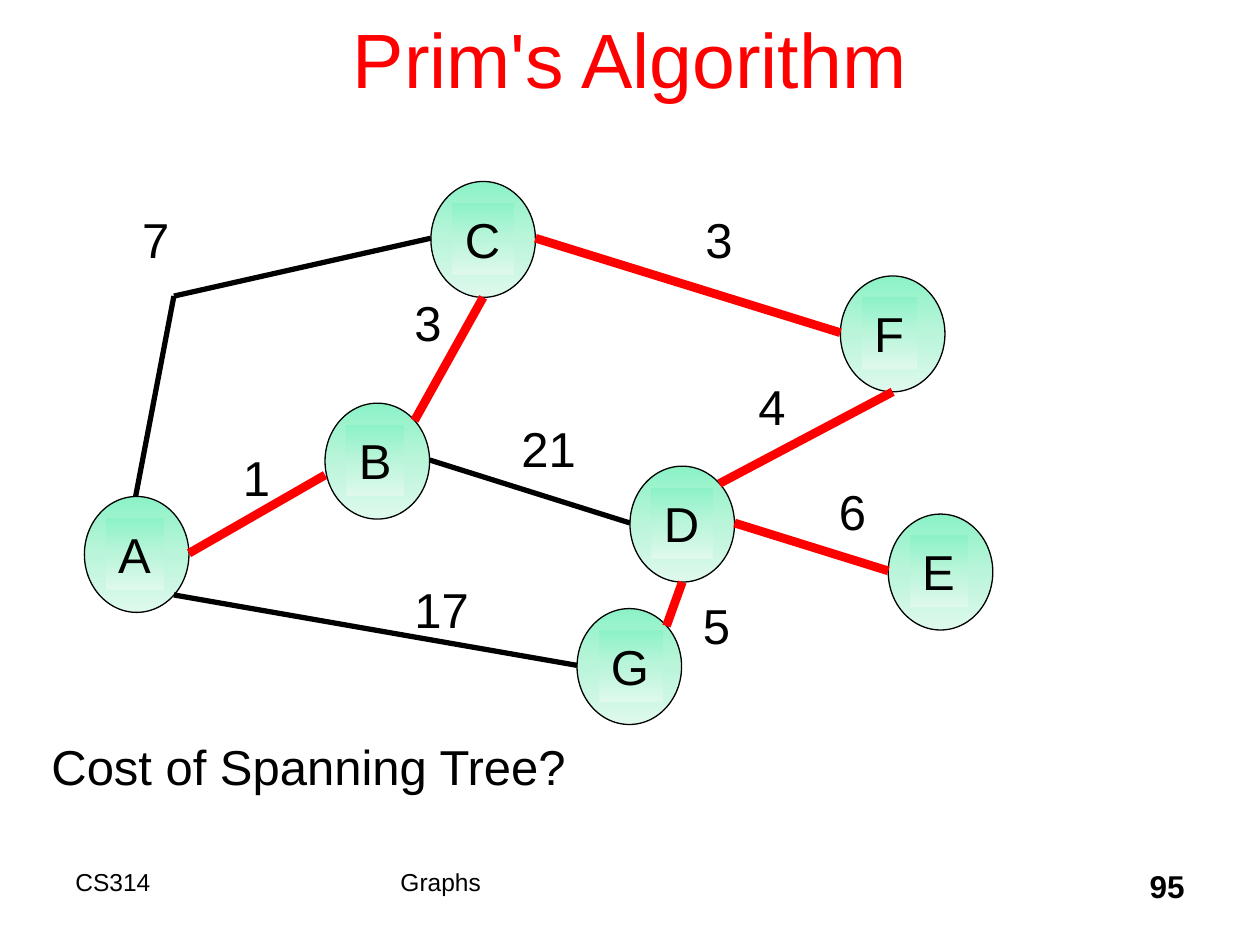
from copy import deepcopy

from lxml import etree
from pptx import Presentation
from pptx.dml.color import RGBColor
from pptx.enum.shapes import MSO_CONNECTOR, MSO_SHAPE
from pptx.enum.text import MSO_ANCHOR, MSO_AUTO_SIZE, PP_ALIGN
from pptx.oxml.ns import qn
from pptx.util import Inches, Pt

LEFT, CENTER, RIGHT = PP_ALIGN.LEFT, PP_ALIGN.CENTER, PP_ALIGN.RIGHT
TOP, MIDDLE = MSO_ANCHOR.TOP, MSO_ANCHOR.MIDDLE
OVAL, RECTANGLE = MSO_SHAPE.OVAL, MSO_SHAPE.RECTANGLE
STRAIGHT = MSO_CONNECTOR.STRAIGHT
FIT_SHAPE = MSO_AUTO_SIZE.SHAPE_TO_FIT_TEXT

FONT = "Arial"
COLORS = {"text": "000000", "edge": "000000", "tree": "FF0000", "title": "FF0000",
          "node top": "8CF2C6", "node middle": "BAF5DA", "node bottom": "DEF9EC"}

NODE_WIDTH, NODE_HEIGHT = 0.83, 0.92
LABEL_INSET, LABEL_HEIGHT = 0.17, 0.57

# Name: left, top, width of the label plate
NODES = {"A": (0.67, 3.94, 0.46), "B": (2.58, 3.2, 0.46), "C": (3.42, 1.44, 0.49),
         "F": (6.67, 2.19, 0.44), "D": (5, 3.7, 0.49), "E": (7.05, 4.08, 0.46),
         "G": (4.58, 4.83, 0.51)}

# Places on a node's rim, as shares of its width and height
RIM = {"left": (0, 0.49), "right": (1, 0.49), "top": (0.49, 0), "bottom": (0.5, 1),
       "upper right": (0.855, 0.15), "lower right": (0.855, 0.85), "lower left": (0, 0.62)}

TREE_EDGES = [("A", "right", "B", "lower left"), ("B", "upper right", "C", "bottom"),
              ("C", "right", "F", "left"), ("F", "bottom", "D", "upper right"),
              ("D", "right", "E", "left"), ("D", "bottom", "G", "upper right")]
OTHER_EDGES = [("B", "right", "D", "left"), ("A", "lower right", "G", "left")]
BEND = (1.38, 2.35)  # corner of the edge from A to C

WEIGHTS = [("1", 1.83, 3.5), ("3", 3.19, 2.27), ("3", 5.5, 1.61), ("21", 4.04, 3.27),
           ("4", 5.92, 2.94), ("6", 6.56, 3.77), ("17", 3.19, 4.55), ("5", 5.48, 4.68),
           ("7", 1.03, 1.61)]


def color(name):
    return RGBColor.from_string(COLORS[name])


def write(shape, text, size=28, fill="text", bold=False, align=LEFT, anchor=TOP,
          wrap=True, before=0, grow=False):
    frame = shape.text_frame
    frame.word_wrap = wrap
    frame.vertical_anchor = anchor
    if grow:
        frame.auto_size = FIT_SHAPE
    para = frame.paragraphs[0]
    para.alignment = align
    para.space_before = Pt(before)
    span = para.add_run()
    span.text = text
    span.font.name, span.font.size, span.font.bold = FONT, Pt(size), bold
    span.font.color.rgb = color(fill)


def add_text(page, text, left, top, width, height, **style):
    box = page.shapes.add_textbox(*map(Inches, (left, top, width, height)))
    write(box, text, **style)


def shade(shape):
    """Fill with the vertical three-stop node gradient."""
    shape.fill.gradient()
    shape.fill.gradient_angle = 270
    stops = shape._element.spPr.find(f".//{qn('a:gsLst')}")
    stops.insert(1, deepcopy(stops[0]))
    names = ("node top", "node middle", "node bottom")
    for stop, position, name in zip(shape.fill.gradient_stops, (0, 0.5, 1), names):
        stop.position = position
        stop.color.rgb = color(name)


def add_node(page, name):
    left, top, label_width = NODES[name]
    group = page.shapes.add_group_shape()
    circle = group.shapes.add_shape(
        OVAL, *map(Inches, (left, top, NODE_WIDTH, NODE_HEIGHT)))
    circle.line.color.rgb = color("edge")
    circle.line.width = Pt(0.75)
    plate = group.shapes.add_shape(
        RECTANGLE, *map(Inches, (left + LABEL_INSET, top + LABEL_INSET,
                                 label_width, LABEL_HEIGHT)))
    plate.line.fill.background()
    for shape in (circle, plate):
        shape.shadow.inherit = False
        shade(shape)
    write(plate, name, wrap=False, before=3, grow=True)


def rim_point(name, place):
    left, top, _ = NODES[name]
    across, down = RIM[place]
    return left + across * NODE_WIDTH, top + down * NODE_HEIGHT


def add_edge(page, start, end, fill="edge", width=3):
    line = page.shapes.add_connector(STRAIGHT, *map(Inches, (*start, *end)))
    line.line.color.rgb = color(fill)
    line.line.width = Pt(width)
    etree.SubElement(line._element.spPr, qn("a:effectLst"))


def main():
    deck = Presentation()
    deck.slide_width, deck.slide_height = Inches(10), Inches(7.5)
    page = deck.slides.add_slide(deck.slide_layouts[6])

    add_text(page, "Prim's Algorithm", 0.75, -0.17, 8.5, 1.25, size=44,
             fill="title", align=CENTER, anchor=MIDDLE)
    add_text(page, "CS314", 0.5, 6.83, 2.5, 0.5, size=14)
    add_text(page, "Graphs", 3.08, 6.83, 3.83, 0.5, size=14)
    add_text(page, "95", 7.42, 6.83, 2.08, 0.5, size=18, bold=True, align=RIGHT)

    for name in NODES:
        add_node(page, name)
    for first, leaving, second, arriving in TREE_EDGES:
        add_edge(page, rim_point(first, leaving), rim_point(second, arriving),
                 fill="tree", width=5)
    for first, leaving, second, arriving in OTHER_EDGES:
        add_edge(page, rim_point(first, leaving), rim_point(second, arriving))
    add_edge(page, rim_point("A", "top"), BEND)
    add_edge(page, BEND, rim_point("C", "left"))

    for weight, left, top in WEIGHTS:
        add_text(page, weight, left, top, 0.2 + 0.22 * len(weight), LABEL_HEIGHT,
                 wrap=False, before=3, grow=True)
    add_text(page, "Cost of Spanning Tree?", 0.31, 5.8, 10.08, LABEL_HEIGHT,
             before=3, grow=True)

    deck.save("out.pptx")


if __name__ == "__main__":
    main()
